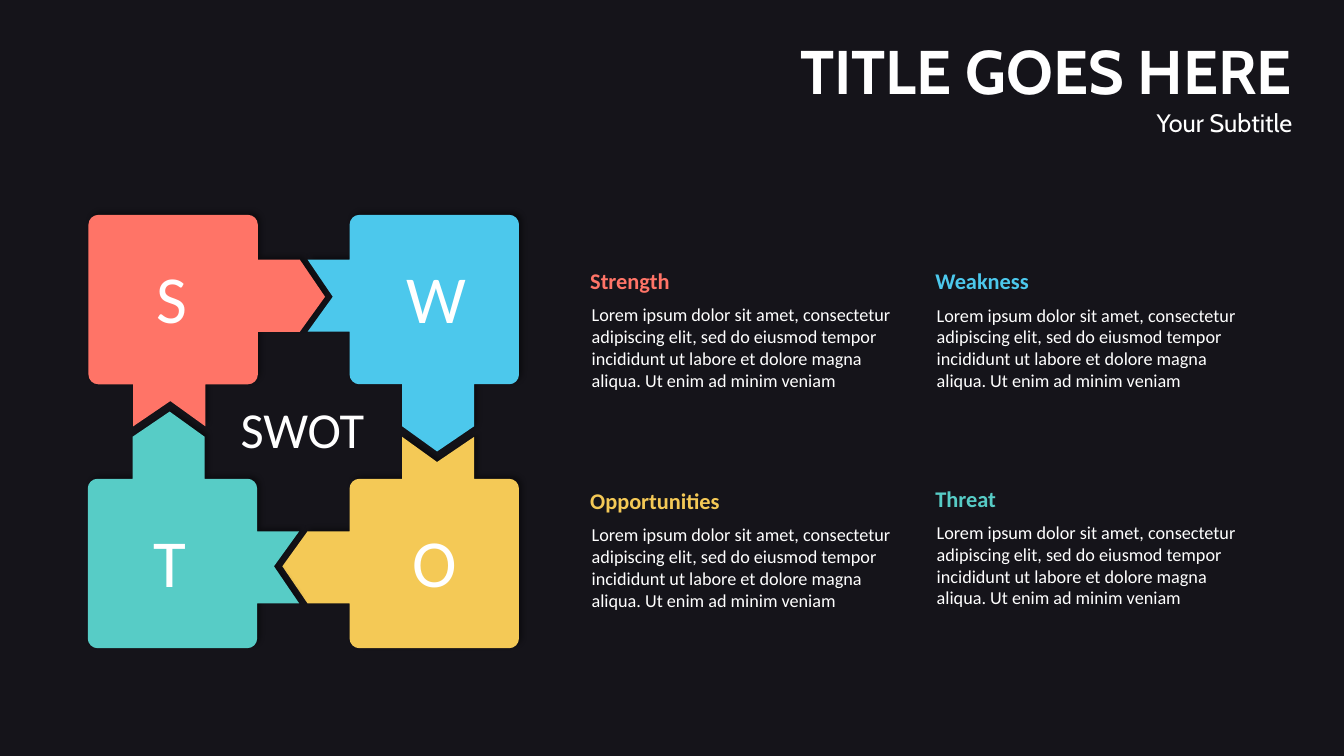
"""Build a dark SWOT slide with four interlocking puzzle pieces."""
from math import cos, pi, sin

from lxml.etree import SubElement
from pptx import Presentation
from pptx.dml.color import RGBColor
from pptx.enum.text import MSO_AUTO_SIZE as AutoSize, PP_ALIGN as Align
from pptx.oxml.ns import qn
from pptx.util import Pt

BACKGROUND = RGBColor(0x15, 0x14, 0x1A)
WHITE = RGBColor(0xFF, 0xFF, 0xFF)
CORAL = RGBColor(0xFF, 0x74, 0x67)
BLUE = RGBColor(0x4C, 0xC8, 0xEC)
YELLOW = RGBColor(0xF4, 0xC9, 0x56)
TEAL = RGBColor(0x57, 0xCC, 0xC6)

BODY = ("Lorem ipsum dolor sit amet, consectetur adipiscing elit, sed do eiusmod "
        "tempor incididunt ut labore et dolore magna aliqua. Ut enim ad minim veniam")

SIDE = 121
RADIUS = 7
POINT = [(32, 0), (32, 30), (58.5, 48), (83.5, 30), (83.5, 0)]
NOTCH = [(37.5, 0), (37.5, 30), (62.5, 12), (89, 30), (89, 0)]

PIECES = [
    ("S", CORAL, 0, 0, -1.4),
    ("W", BLUE, 186.5, 0, 0.7),
    ("O", YELLOW, 186.5, 188.5, -0.7),
    ("T", TEAL, -0.5, 188.5, -2.2),
]
TOPICS = [
    ("Strength", CORAL, 0, 0),
    ("Weakness", BLUE, 246.5, 0.3),
    ("Opportunities", YELLOW, 0, 157),
    ("Threat", TEAL, 246.5, 155.5),
]


def add_text(slide, box, lines, align=Align.LEFT):
    left, top, width, height = box
    shape = slide.shapes.add_textbox(Pt(left), Pt(top), Pt(width), Pt(height))
    frame = shape.text_frame
    frame.word_wrap = True
    frame.auto_size = AutoSize.SHAPE_TO_FIT_TEXT
    frame.text = "\n".join(text for text, *_ in lines)
    for paragraph, (_, font_name, size, color, bold) in zip(frame.paragraphs, lines):
        paragraph.alignment = align
        font = paragraph.runs[0].font
        font.name, font.size, font.bold = font_name, Pt(size), bold
        font.color.rgb = color


def rotate(point, turns):
    x, y = point
    for _ in range(turns):
        x, y = -y, x
    return x, y


def piece_outline(turns):
    half = SIDE / 2
    inner = half - RADIUS
    corner = [(inner + RADIUS * sin(step * pi / 8), -inner - RADIUS * cos(step * pi / 8))
              for step in range(5)]
    outline = []
    for side, tab in enumerate([[], POINT, NOTCH, []]):
        edge = [(along - half, -half - outward) for along, outward in tab]
        outline += [rotate(point, side + turns) for point in edge + corner]
    return outline


def add_shadow(shape):
    effects = SubElement(shape._element.spPr, qn("a:effectLst"))
    shadow = SubElement(effects, qn("a:outerShdw"), blurRad=str(Pt(4)), dist=str(Pt(3)),
                        dir="18900000", algn="bl", rotWithShape="0")
    color = SubElement(shadow, qn("a:srgbClr"), val="000000")
    SubElement(color, qn("a:alpha"), val="40000")


def add_piece(slide, left, top, turns, letter, color, nudge):
    center_x, center_y = left + SIDE / 2, top + SIDE / 2
    points = [(Pt(center_x + x), Pt(center_y + y)) for x, y in piece_outline(turns)]
    builder = slide.shapes.build_freeform(*points[0])
    builder.add_line_segments(points[1:], close=True)
    shape = builder.convert_to_shape()
    shape.fill.solid()
    shape.fill.fore_color.rgb = color
    shape.line.fill.background()
    add_shadow(shape)
    add_text(slide, (left + nudge, top + 26, 122.4, 65.5),
             [(letter, "Calibri", 48, WHITE, False)], Align.CENTER)


def add_puzzle(slide, left, top):
    for turns, (letter, color, dx, dy, nudge) in enumerate(PIECES):
        add_piece(slide, left + dx, top + dy, turns, letter, color, nudge)
    add_text(slide, (left + 83, top + 127.3, 139.5, 52.5),
             [("SWOT", "Calibri", 36, WHITE, False)], Align.CENTER)


def add_topics(slide, left, top):
    for heading, color, dx, dy in TOPICS:
        x, y = left + dx, top + dy
        add_text(slide, (x, y, 204, 26.6), [(heading, "Calibri", 16, color, True)])
        add_text(slide, (x + 1, y + 26, 229.7, 70.6), [(BODY, "Calibri", 13, WHITE, False)])


def add_title(slide, box):
    add_text(slide, box, [("TITLE GOES HERE", "Cabin", 44, WHITE, True),
                          ("Your Subtitle", "Cabin", 18, WHITE, False)], Align.RIGHT)


def main():
    presentation = Presentation()
    presentation.slide_width, presentation.slide_height = Pt(960), Pt(540)
    slide = presentation.slides.add_slide(presentation.slide_layouts[6])
    slide.background.fill.solid()
    slide.background.fill.fore_color.rgb = BACKGROUND
    add_puzzle(slide, 63.2, 153.5)
    add_topics(slide, 414.5, 187.2)
    add_title(slide, (496.8, 20.2, 433.4, 82))
    presentation.save("out.pptx")


if __name__ == "__main__":
    main()
